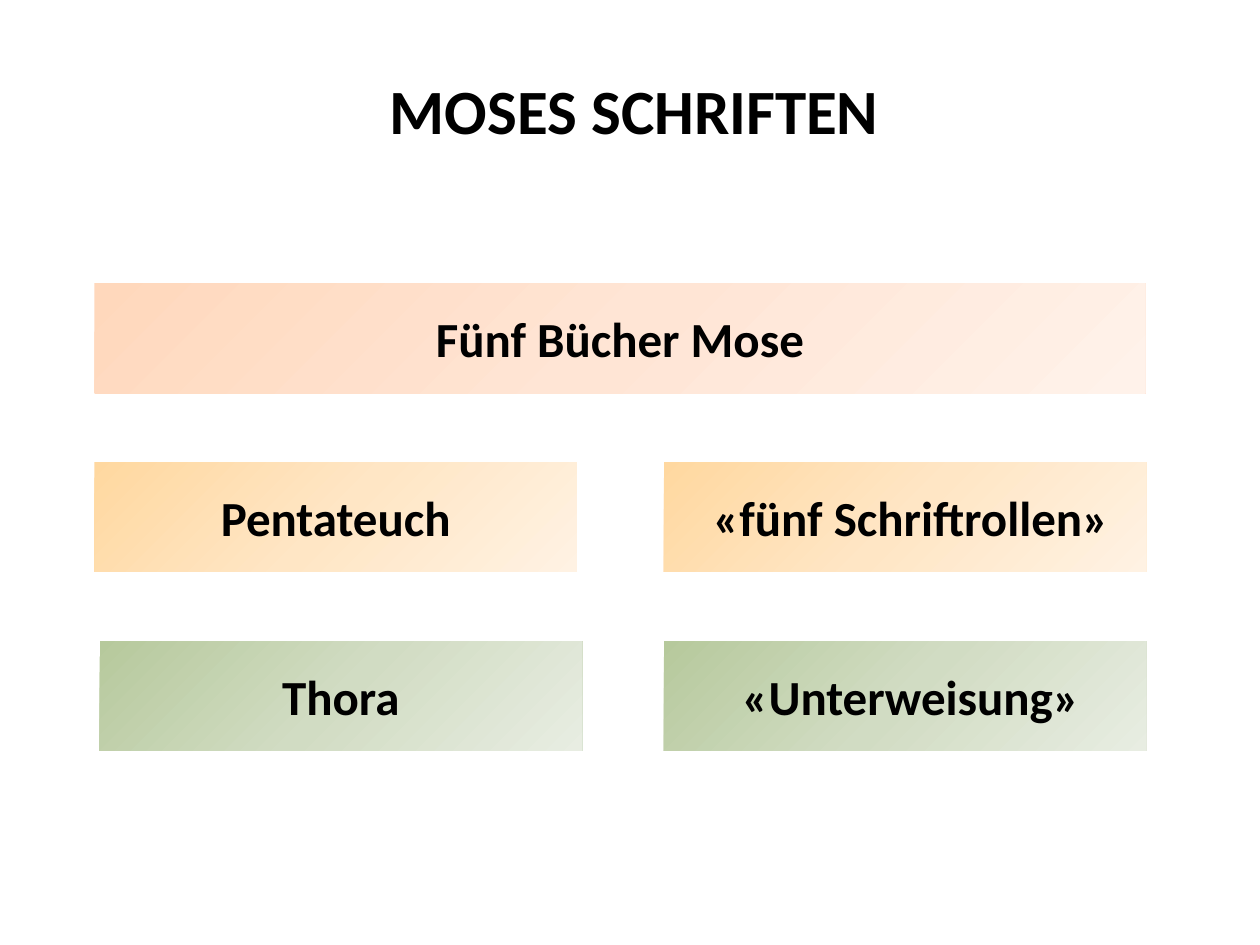
import copy

import pptx
import pptx.dml.color
import pptx.enum.shapes
import pptx.enum.text
import pptx.oxml
import pptx.oxml.ns
import pptx.util

RGBColor = pptx.dml.color.RGBColor
BLACK = RGBColor(0x00, 0x00, 0x00)
WHITE = RGBColor(0xFF, 0xFF, 0xFF)
PEACH = (RGBColor(0xFF, 0xD8, 0xBC), RGBColor(0xFF, 0xE5, 0xD5), RGBColor(0xFF, 0xF2, 0xEA))
AMBER = (RGBColor(0xFF, 0xD8, 0xA0), RGBColor(0xFF, 0xE6, 0xC5), RGBColor(0xFF, 0xF2, 0xE3))
GREEN = (RGBColor(0xB6, 0xC9, 0x9C), RGBColor(0xD1, 0xDC, 0xC3), RGBColor(0xE8, 0xED, 0xE2))

LEFT, RIGHT = 0.75, 5.27
HALF, FULL = 3.83, 8.34
FIRST_ROW, ROW_STEP, BAR_HEIGHT = 2.25, 1.42, 0.87


def write(frame, text, size=28, font="Calibri", color=BLACK, bold=True,
          anchor=pptx.enum.text.MSO_ANCHOR.MIDDLE, inset=(0.1, 0.05)):
    frame.word_wrap = True
    frame.auto_size = pptx.enum.text.MSO_AUTO_SIZE.NONE
    frame.vertical_anchor = anchor
    frame.margin_left = frame.margin_right = pptx.util.Inches(inset[0])
    frame.margin_top = frame.margin_bottom = pptx.util.Inches(inset[1])
    paragraph = frame.paragraphs[0]
    paragraph.alignment = pptx.enum.text.PP_ALIGN.CENTER
    run = paragraph.add_run()
    run.text = text
    run.font.size = pptx.util.Pt(size)
    run.font.name = font
    run.font.bold = bold
    run.font.color.rgb = color


class NamesSlide:
    """Title and gradient bars on a slide of two columns and three rows."""

    def __init__(self, deck):
        self.slide = deck.slides.add_slide(deck.slide_layouts[5])

    def title(self, text, left, top, width, height):
        heading = self.slide.shapes.title
        heading.left, heading.top, heading.width, heading.height = map(
            pptx.util.Inches, (left, top, width, height))
        heading.fill.solid()
        heading.fill.fore_color.rgb = WHITE
        white = heading.fill._xPr.find(".//" + pptx.oxml.ns.qn("a:srgbClr"))
        white.append(pptx.oxml.parse_xml(
            f'<a:alpha {pptx.oxml.ns.nsdecls("a")} val="60000"/>'))
        write(heading.text_frame, text, size=36, anchor=pptx.enum.text.MSO_ANCHOR.TOP)

    def bar(self, text, row, left, width, shades):
        top = FIRST_ROW + row * ROW_STEP
        bar = self.slide.shapes.add_shape(
            pptx.enum.shapes.MSO_SHAPE.RECTANGLE,
            *map(pptx.util.Inches, (left, top, width, BAR_HEIGHT)))
        bar.shadow.inherit = False
        bar.line.fill.background()
        self.shade(bar, shades)
        write(bar.text_frame, text, inset=(0.1, 0.2))

    def shade(self, bar, shades):
        bar.fill.gradient()
        bar.fill.gradient_angle = 315
        stop_list = bar._element.spPr.find(".//" + pptx.oxml.ns.qn("a:gsLst"))
        stop_list.append(copy.deepcopy(stop_list[-1]))
        for index, (stop, shade) in enumerate(zip(bar.fill.gradient_stops, shades)):
            stop.position = index / (len(shades) - 1)
            stop.color.rgb = shade


def main():
    deck = pptx.Presentation()
    deck.slide_width = pptx.util.Inches(10)
    deck.slide_height = pptx.util.Inches(7.5)
    names = NamesSlide(deck)
    names.title("MOSES SCHRIFTEN", 0.43, 0.52, 9.21, 0.63)
    names.bar("Thora", 2, LEFT + 0.04, HALF, GREEN)
    names.bar("Pentateuch", 1, LEFT, HALF, AMBER)
    names.bar(" «fünf Schriftrollen»", 1, RIGHT, HALF, AMBER)
    names.bar(" «Unterweisung»", 2, RIGHT, HALF, GREEN)
    names.bar("Fünf Bücher Mose", 0, LEFT, FULL, PEACH)
    deck.save("out.pptx")


if __name__ == "__main__":
    main()
